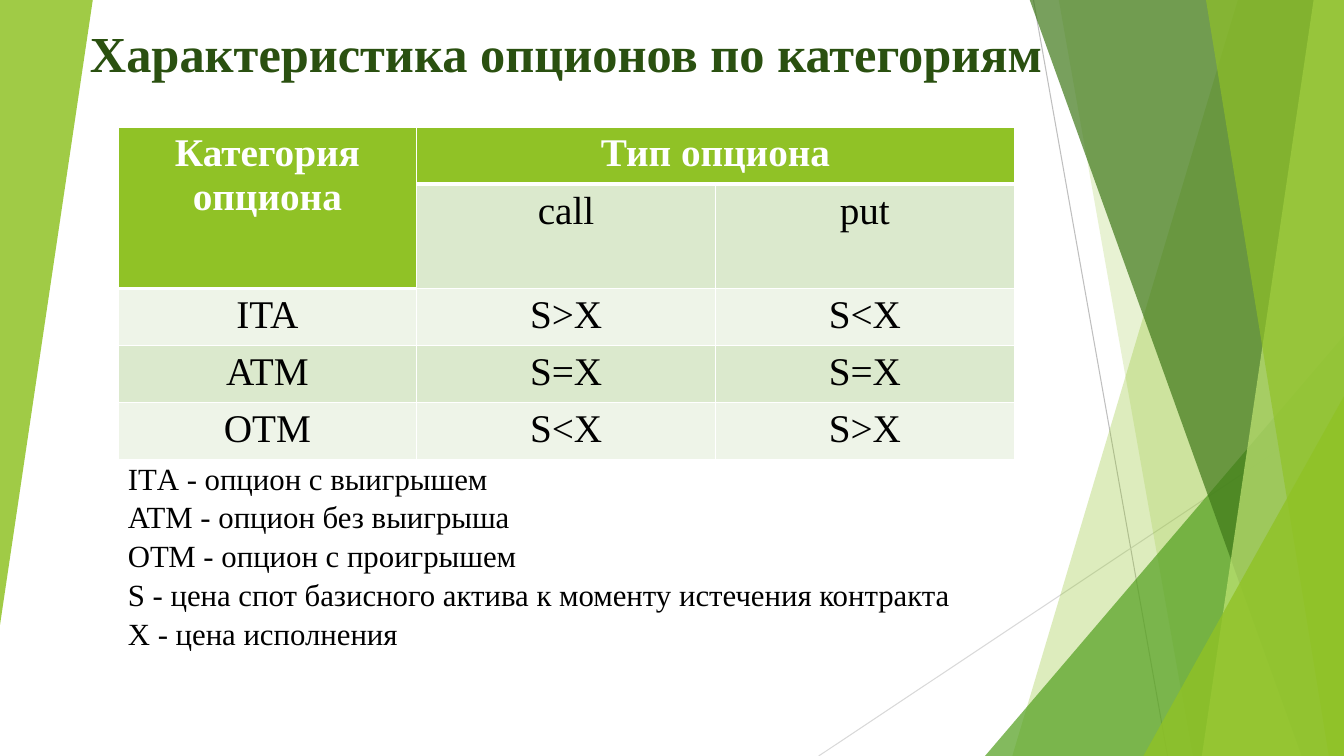
from lxml.etree import SubElement as Sub
from pptx import Presentation
from pptx.dml.color import RGBColor
from pptx.enum.shapes import MSO_CONNECTOR as Link, MSO_SHAPE as Kind
from pptx.enum.text import MSO_ANCHOR as Anchor, PP_ALIGN as Align
from pptx.oxml.ns import qn
from pptx.util import Inches, Pt

TITLE = "Характеристика опционов по категориям"
ROWS = [
    ["Категория опциона", "Тип опциона", ""],
    ["", "call", "put"],
    ["ITA", "S>X", "S<X"],
    ["ATM", "S=X", "S=X"],
    ["OTM", "S<X", "S>X"],
]
NOTES = [
    "ITА - опцион с выигрышем",
    "ATM - опцион без выигрыша",
    "ОТМ - опцион с проигрышем",
    "S - цена спот базисного актива к моменту истечения контракта",
    "X - цена исполнения",
]
HEADS = {(0, 0), (0, 1), (0, 2), (1, 0)}
HEIGHTS = [0.53, 0.96, 0.53, 0.53, 0.53]
LEFT, WIDTH = 1.17, 8.89
WIDE, HIGH = 13.33, 7.5
GREEN, DARK, PALE, LIGHT = "90C226", "2A5010", "DBE9CD", "EEF4E8"
WHITE, BLACK = "FFFFFF", "000000"

LINES = [
    (10.25, 0, 11.58, HIGH, "BFBFBF"),
    (WIDE, 4.03, 8.12, HIGH, "D9D9D9"),
]
FACETS = [
    ("band", 12.28, 10.04, GREEN, 30),
    ("band", 10.5, 11.83, GREEN, 20),
    ("peak", (9.77, 3.33, 3.56, 4.17), 0, "54A021", 72),
    ("band", 10.21, 12.91, "3F7819", 70),
    ("band", 13.03, 11.92, "C0E474", 70),
    ("band", 11.96, 13.18, GREEN, 65),
    ("peak", (11.34, 3.93, 1.99, 3.57), 0, GREEN, 80),
    ("peak", (0, 0, 0.92, 6.2), 180, GREEN, 85),
]


def color(code):
    return RGBColor.from_string(code)


def write(frame, text, size=22, code=BLACK, bold=False, align=Align.LEFT, gap=None):
    frame.word_wrap = True
    for i, line in enumerate(text.split("\n")):
        para = frame.paragraphs[0] if i == 0 else frame.add_paragraph()
        para.alignment = align
        para.line_spacing = gap
        run = para.add_run()
        run.text = line
        font = run.font
        font.name, font.size, font.bold = "Times New Roman", Pt(size), bold
        font.color.rgb = color(code)


def paint(shape, code, alpha):
    shape.shadow.inherit = False
    shape.line.fill.background()
    shape.fill.solid()
    shape.fill.fore_color.rgb = color(code)
    tint = shape.fill._xPr.find(qn("a:solidFill"))[0]
    Sub(tint, qn("a:alpha"), val=str(alpha * 1000))


def band(top, foot):
    pen = shapes.build_freeform(Inches(top), Inches(-0.01))
    ends = [(WIDE, -0.01), (WIDE, HIGH), (foot, HIGH)]
    pen.add_line_segments([(Inches(x), Inches(y)) for x, y in ends], close=True)
    return pen.convert_to_shape()


def peak(area, turn):
    shape = shapes.add_shape(Kind.ISOSCELES_TRIANGLE, *map(Inches, area))
    shape.adjustments[0] = 1
    shape.rotation = turn
    return shape


def edge(cell, head):
    props = cell._tc.get_or_add_tcPr()
    for side in "LRTB" if head else "LRB":
        width = Pt(3 if head and side == "B" else 1)
        line = Sub(props, qn("a:ln" + side), w=str(width))
        Sub(Sub(line, qn("a:solidFill")), qn("a:srgbClr"), val=WHITE)


deck = Presentation()
deck.slide_width, deck.slide_height = Inches(WIDE), Inches(HIGH)
shapes = deck.slides.add_slide(deck.slide_layouts[6]).shapes

for *ends, code in LINES:
    line = shapes.add_connector(Link.STRAIGHT, *map(Inches, ends))
    line.line.color.rgb = color(code)
    line.line.width = Pt(0.75)
    Sub(line._element.spPr, qn("a:effectLst"))

for kind, start, end, code, alpha in FACETS:
    make = band if kind == "band" else peak
    paint(make(start, end), code, alpha)

title = shapes.add_textbox(*map(Inches, (0.66, 0.1, 9.91, 0.77))).text_frame
title.vertical_anchor = Anchor.BOTTOM
write(title, TITLE, size=36, code=DARK, bold=True, align=Align.CENTER)

area = map(Inches, (LEFT, 1.26, WIDTH, sum(HEIGHTS)))
table = shapes.add_table(len(ROWS), len(ROWS[0]), *area).table
table.first_row = table.horz_banding = False
for col in table.columns:
    col.width = Inches(WIDTH / len(ROWS[0]))
for r, (row, height) in enumerate(zip(ROWS, HEIGHTS)):
    table.rows[r].height = Inches(height)
    for c, text in enumerate(row):
        cell, head = table.cell(r, c), (r, c) in HEADS
        edge(cell, head)
        cell.fill.solid()
        cell.fill.fore_color.rgb = color(GREEN if head else PALE if r % 2 else LIGHT)
        if text:
            write(cell.text_frame, text, size=28, code=WHITE if head else BLACK,
                  bold=head, align=Align.CENTER)
table.cell(0, 0).merge(table.cell(1, 0))
table.cell(0, 1).merge(table.cell(0, 2))

notes = shapes.add_textbox(*map(Inches, (LEFT, 4.49, WIDTH, 1.95))).text_frame
write(notes, "\n".join(NOTES), gap=1.05)

deck.save("out.pptx")
